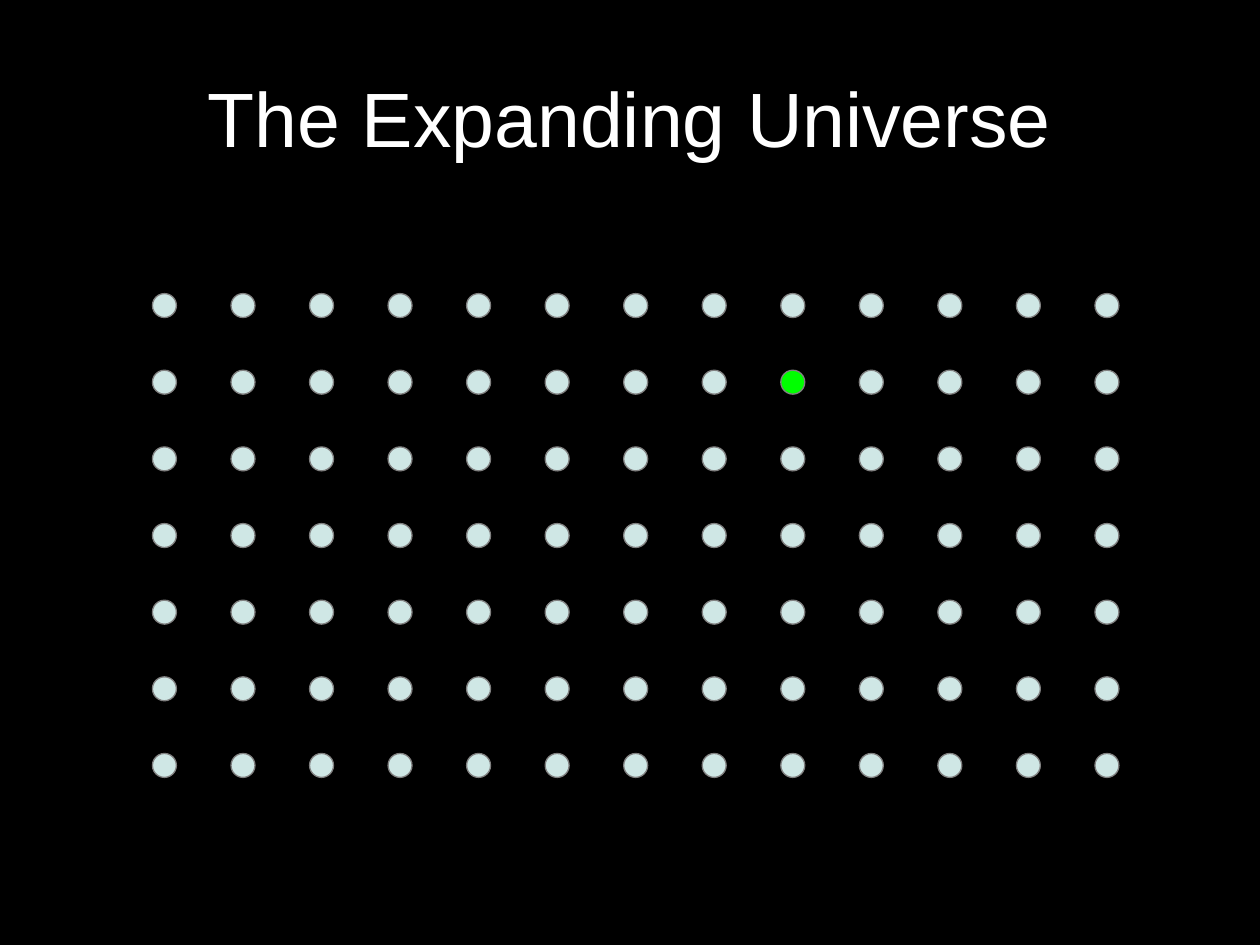
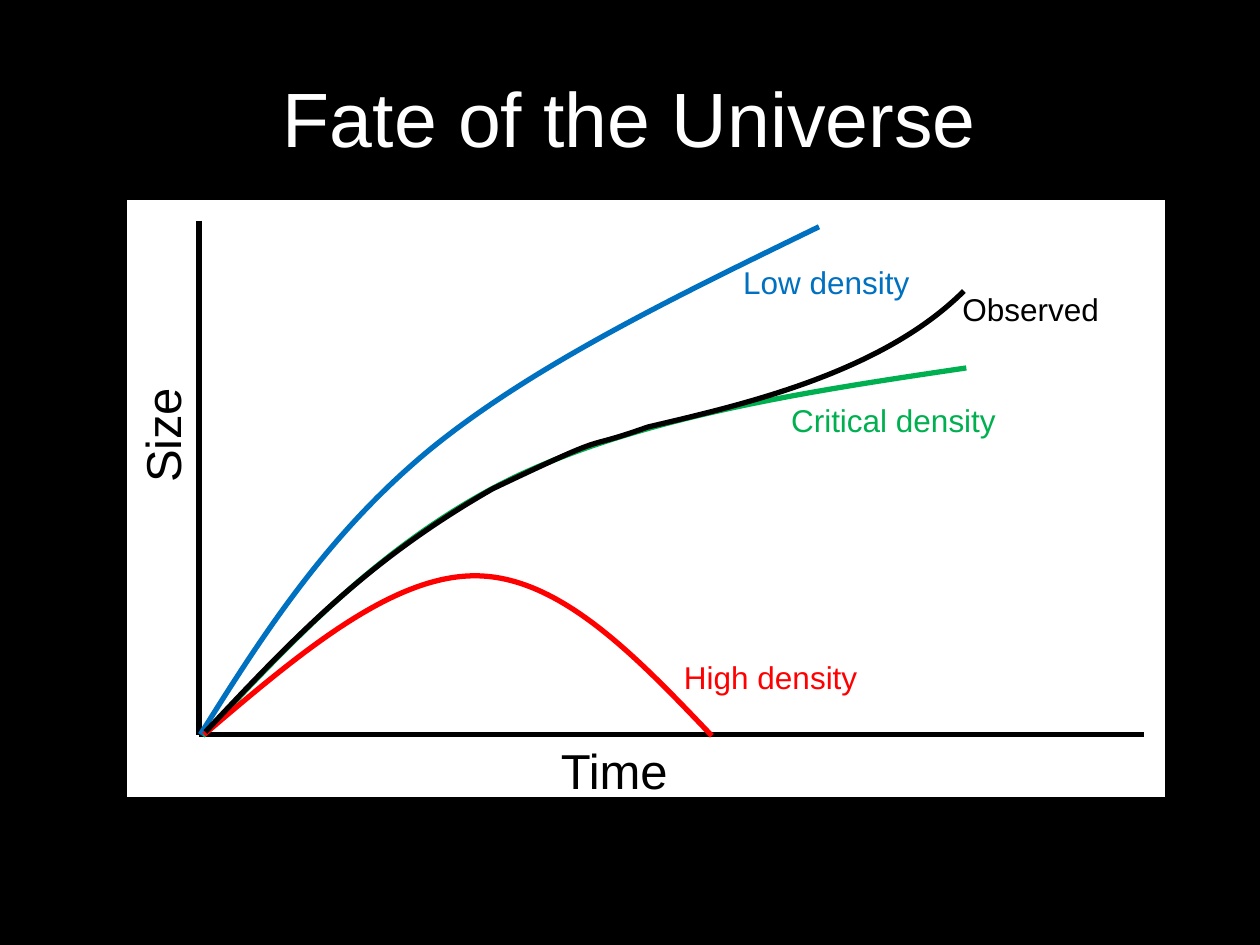
"""Two slides on the expanding universe and its possible fates."""
from lxml import etree
from pptx import Presentation
from pptx.dml.color import RGBColor
from pptx.enum.shapes import MSO_CONNECTOR, MSO_SHAPE
from pptx.enum.text import MSO_ANCHOR, PP_ALIGN
from pptx.oxml.ns import qn
from pptx.util import Inches, Pt

RECTANGLE, OVAL = MSO_SHAPE.RECTANGLE, MSO_SHAPE.OVAL
STRAIGHT = MSO_CONNECTOR.STRAIGHT
LEFT, CENTER = PP_ALIGN.LEFT, PP_ALIGN.CENTER
TOP, MIDDLE = MSO_ANCHOR.TOP, MSO_ANCHOR.MIDDLE

FONT = "Arial"
COLORS = {
    "black": "000000",
    "white": "FFFFFF",
    "galaxy": "CFE7E5",
    "home": "00FF00",
    "outline": "808080",
    "low": "0070C0",
    "critical": "00B050",
    "high": "FF0000",
}
RGB = {name: RGBColor.from_string(value) for name, value in COLORS.items()}


def add_text(slide, text, box, size, color, align=LEFT, anchor=TOP):
    label = slide.shapes.add_textbox(*map(Inches, box))
    frame = label.text_frame
    frame.word_wrap = True
    frame.vertical_anchor = anchor
    paragraph = frame.paragraphs[0]
    paragraph.alignment = align
    run = paragraph.add_run()
    run.text = text
    run.font.name = FONT
    run.font.size = Pt(size)
    run.font.color.rgb = RGB[color]
    return label


def style_shape(shape, fill, line=None, width=0.75):
    shape.shadow.inherit = False
    if fill:
        shape.fill.solid()
        shape.fill.fore_color.rgb = RGB[fill]
    else:
        shape.fill.background()
    if line:
        shape.line.color.rgb = RGB[line]
        shape.line.width = Pt(width)
    else:
        shape.line.fill.background()


prs = Presentation()
prs.slide_width, prs.slide_height = Inches(10), Inches(7.5)
expansion, fate = [prs.slides.add_slide(prs.slide_layouts[6]) for _ in range(2)]

night_sky = expansion.shapes.add_shape(RECTANGLE, 0, 0, prs.slide_width, prs.slide_height)
style_shape(night_sky, "black")
night_sky._element.nvSpPr.cNvPr.set("id", "100")
prs.slide_master.shapes._spTree.insert(2, night_sky._element)

for slide, title in ((expansion, "The Expanding Universe"), (fate, "Fate of the Universe")):
    add_text(slide, title, (0.5, 0.3, 9, 1.25), 44, "white", CENTER, MIDDLE)

COLUMNS, ROWS, DIAMETER = 13, 7, 0.19
HOME = (1, 8)
column_step = (8.69 - 1.21) / (COLUMNS - 1)
row_step = (5.98 - 2.33) / (ROWS - 1)
galaxies = expansion.shapes.add_group_shape()
for row in range(ROWS):
    for column in range(COLUMNS):
        galaxy = galaxies.shapes.add_shape(
            OVAL, Inches(1.21 + column * column_step), Inches(2.33 + row * row_step),
            Inches(DIAMETER), Inches(DIAMETER))
        style_shape(galaxy, "home" if (row, column) == HOME else "galaxy", "outline")

plot = fate.shapes.add_shape(RECTANGLE, Inches(1), Inches(1.58), Inches(8.25), Inches(4.75))
style_shape(plot, "white", "black")

for start, end in (((1.58, 1.75), (1.58, 5.83)), ((1.58, 5.83), (9.08, 5.83))):
    axis = fate.shapes.add_connector(STRAIGHT, *map(Inches, start + end))
    axis.line.color.rgb = RGB["black"]
    axis.line.width = Pt(3)
    etree.SubElement(axis._element.spPr, qn("a:effectLst"))

CURVES = [
    ("critical", [(1.61, 5.84), (2.34, 5.06), (3.07, 4.28), (4.08, 3.79),
                  (5.09, 3.31), (6.38, 3.11), (7.67, 2.92)]),
    ("low", [(1.59, 5.83), (2.09, 5.03), (2.6, 4.24), (3.41, 3.57),
             (4.23, 2.9), (5.37, 2.35), (6.5, 1.8)]),
    ("high", [(1.62, 5.83), (2.36, 5.2), (3.1, 4.57), (3.77, 4.57),
              (4.44, 4.57), (5.05, 5.21), (5.65, 5.84)]),
    ("black", [(1.63, 5.81), (2.36, 5.03), (2.93, 4.44), (3.91, 3.88),
               (4.94, 3.39), (4.55, 3.6), (5.14, 3.39),
               (5.86, 3.22), (6.99, 2.97), (7.65, 2.31)]),
]
for color, controls in CURVES:
    start, *others = [(Inches(x), Inches(y)) for x, y in controls]
    builder = fate.shapes.build_freeform(*start)
    builder.add_line_segments(others, close=False)
    curve = builder.convert_to_shape()
    style_shape(curve, None, color, 3)
    outline = curve._element.find(".//" + qn("a:path"))
    segments = outline.findall(qn("a:lnTo"))
    for first in range(0, len(segments), 3):
        bezier = etree.SubElement(outline, qn("a:cubicBezTo"))
        for segment in segments[first:first + 3]:
            bezier.append(segment[0])
            outline.remove(segment)

size_label = add_text(fate, "Size", (0.41, 3.17, 1.75, 0.57), 28, "black", CENTER)
size_label.rotation = 270
add_text(fate, "Time", (4, 5.83, 1.75, 0.57), 28, "black", CENTER)
for text, left, top, color in (
    ("Low density", 5.8, 2.04, "low"),
    ("High density", 5.33, 5.17, "high"),
    ("Critical density", 6.18, 3.13, "critical"),
    ("Observed", 7.54, 2.25, "black"),
):
    add_text(fate, text, (left, top, 2.58, 0.4), 18, color)

prs.save("out.pptx")
